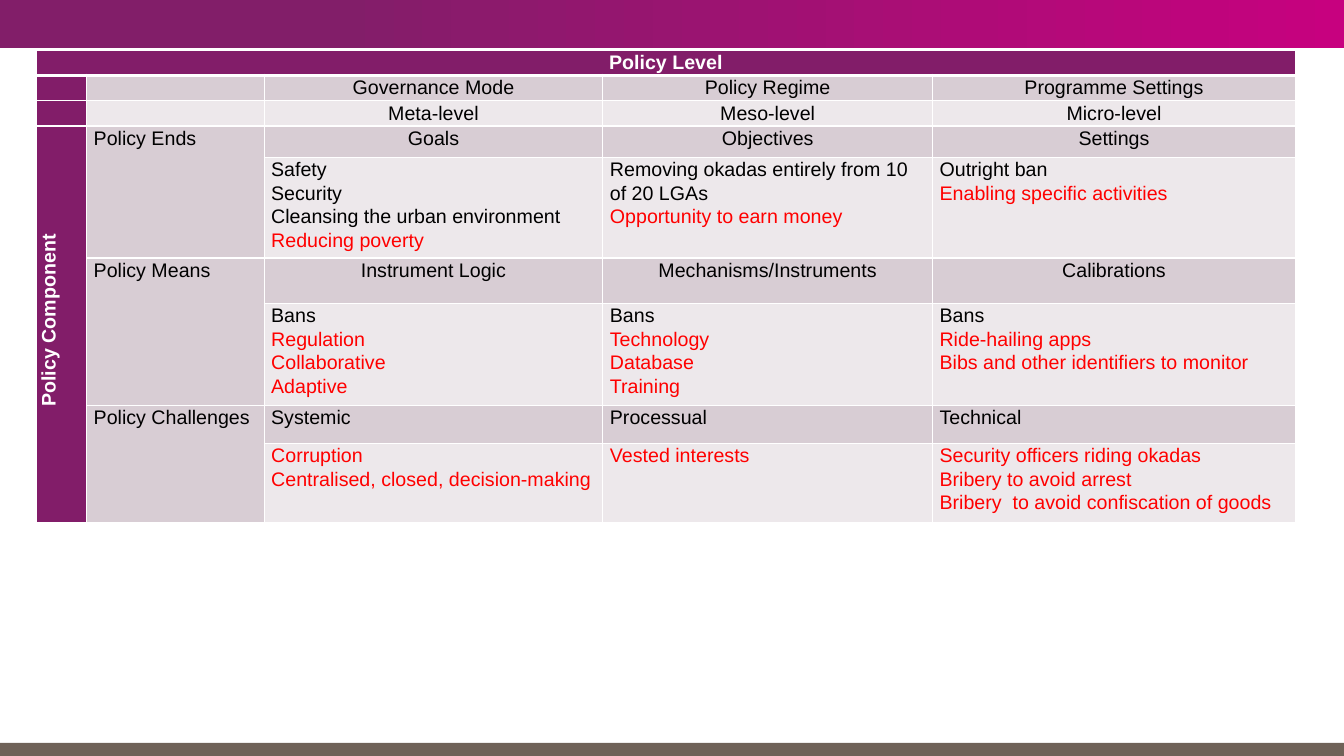
from lxml import etree
from pptx import Presentation
from pptx.dml.color import RGBColor
from pptx.enum.shapes import MSO_SHAPE
from pptx.enum.text import MSO_ANCHOR, PP_ALIGN
from pptx.oxml.ns import qn
from pptx.util import Inches, Pt

RECT = MSO_SHAPE.RECTANGLE
MIDDLE = MSO_ANCHOR.MIDDLE
CENTER, LEFT = PP_ALIGN.CENTER, PP_ALIGN.LEFT

PURPLE, MAGENTA, TAUPE = "821E69", "C7017F", "6F6258"
HEADER, DARK_BAND, LIGHT_BAND = "821D69", "D8CDD4", "EDE8EB"
WHITE, BLACK, RED = "FFFFFF", "000000", "FF0000"

COL_WIDTHS = [0.5, 1.76, 3.36, 3.27, 3.6]
ROW_HEIGHTS = [0.25, 0.25, 0.25, 0.31, 1, 0.45, 1.01, 0.38, 0.79]
CENTERED_ROWS = (1, 2, 3, 5)
COMPONENTS = {3: "Policy Ends", 5: "Policy Means", 7: "Policy Challenges"}
HEADINGS = {
    1: ["Governance Mode", "Policy Regime", "Programme Settings"],
    2: ["Meta-level", "Meso-level", "Micro-level"],
    3: ["Goals", "Objectives", "Settings"],
    5: ["Instrument Logic", "Mechanisms/Instruments", "Calibrations"],
    7: ["Systemic", "Processual", "Technical"],
}
DETAILS = {
    4: [
        (["Safety", "Security", "Cleansing the urban environment"], ["Reducing poverty"]),
        (["Removing okadas entirely from 10 of 20 LGAs"], ["Opportunity to earn money"]),
        (["Outright ban"], ["Enabling specific activities"]),
    ],
    6: [
        (["Bans"], ["Regulation", "Collaborative", "Adaptive"]),
        (["Bans"], ["Technology", "Database", "Training"]),
        (["Bans"], ["Ride-hailing apps", "Bibs and other identifiers to monitor"]),
    ],
    8: [
        ([], ["Corruption", "Centralised, closed, decision-making"]),
        ([], ["Vested interests"]),
        ([], ["Security officers riding okadas", "Bribery to avoid arrest",
              "Bribery  to avoid confiscation of goods"]),
    ],
}


def rgb(value):
    return RGBColor.from_string(value)


def add_band(slide, top, height):
    sp = slide.shapes.add_shape(RECT, 0, Inches(top), Inches(13.33), Inches(height))
    sp.shadow.inherit = False
    sp.line.fill.background()
    return sp


def fill_gradient(sp):
    sp.fill.gradient()
    sp.fill.gradient_angle = 180
    for stop, color, position in zip(sp.fill.gradient_stops, (MAGENTA, PURPLE), (0, 0.75)):
        stop.color.rgb = rgb(color)
        stop.position = position


def add_borders(cell, top, bottom):
    tc_pr = cell._tc.get_or_add_tcPr()
    for side, width in (("lnL", 1), ("lnR", 1), ("lnT", top), ("lnB", bottom)):
        ln = etree.SubElement(tc_pr, qn(f"a:{side}"), w=str(Pt(width)))
        solid = etree.SubElement(ln, qn("a:solidFill"))
        etree.SubElement(solid, qn("a:srgbClr"), val=WHITE)


def style_cell(cell, row, col):
    cell.margin_left = cell.margin_right = Inches(0.07)
    cell.margin_top = cell.margin_bottom = 0
    add_borders(cell, 3 if row == 1 else 1, 3 if row == 0 else 1)
    cell.fill.solid()
    band = DARK_BAND if row % 2 else LIGHT_BAND
    cell.fill.fore_color.rgb = rgb(HEADER if row == 0 or col == 0 else band)
    p = cell.text_frame.paragraphs[0]
    etree.SubElement(p._p, qn("a:endParaRPr"), sz="1400")


def write(cell, lines, align=LEFT, bold=False):
    tf = cell.text_frame
    for i, (text, color) in enumerate(lines):
        p = tf.add_paragraph() if i else tf.paragraphs[0]
        p.add_run().text = text
        p.alignment = align
        p.line_spacing = 1.07
        p.font.name = "Arial"
        p.font.size = Pt(14)
        p.font.bold = bold
        p.font.color.rgb = rgb(color)


def write_header(cell, text):
    write(cell, [(text, WHITE)], CENTER, True)
    cell.text_frame.paragraphs[0].space_after = Pt(8)


def add_policy_table(slide):
    frame = slide.shapes.add_table(
        len(ROW_HEIGHTS), len(COL_WIDTHS), Inches(0.36), Inches(0.5),
        Inches(sum(COL_WIDTHS)), Inches(sum(ROW_HEIGHTS)))
    table = frame.table
    for column, width in zip(table.columns, COL_WIDTHS):
        column.width = Inches(width)
    for row, height in zip(table.rows, ROW_HEIGHTS):
        row.height = Inches(height)
    for r in range(len(ROW_HEIGHTS)):
        for c in range(len(COL_WIDTHS)):
            style_cell(table.cell(r, c), r, c)

    level = table.cell(0, 0)
    level.merge(table.cell(0, 4))
    write_header(level, "Policy Level")

    component = table.cell(3, 0)
    component.merge(table.cell(8, 0))
    write_header(component, "Policy Component")
    component.vertical_anchor = MIDDLE
    component._tc.tcPr.set("vert", "vert270")
    p = component.text_frame.paragraphs[0]
    p._p.get_or_add_pPr().set("marL", str(Inches(0.08)))

    for r, text in COMPONENTS.items():
        cell = table.cell(r, 1)
        cell.merge(table.cell(r + 1, 1))
        write(cell, [(text, BLACK)])
    for r, texts in HEADINGS.items():
        for c, text in enumerate(texts, 2):
            write(table.cell(r, c), [(text, BLACK)], CENTER if r in CENTERED_ROWS else LEFT)
    for r, entries in DETAILS.items():
        for c, (current, proposed) in enumerate(entries, 2):
            lines = [(text, BLACK) for text in current] + [(text, RED) for text in proposed]
            write(table.cell(r, c), lines)


def main():
    prs = Presentation()
    prs.slide_width, prs.slide_height = Inches(13.33), Inches(7.5)
    slide = prs.slides.add_slide(prs.slide_layouts[6])
    fill_gradient(add_band(slide, 0, 0.48))
    footer = add_band(slide, 7.37, 0.13)
    footer.fill.solid()
    footer.fill.fore_color.rgb = rgb(TAUPE)
    add_policy_table(slide)
    prs.save("out.pptx")


if __name__ == "__main__":
    main()
